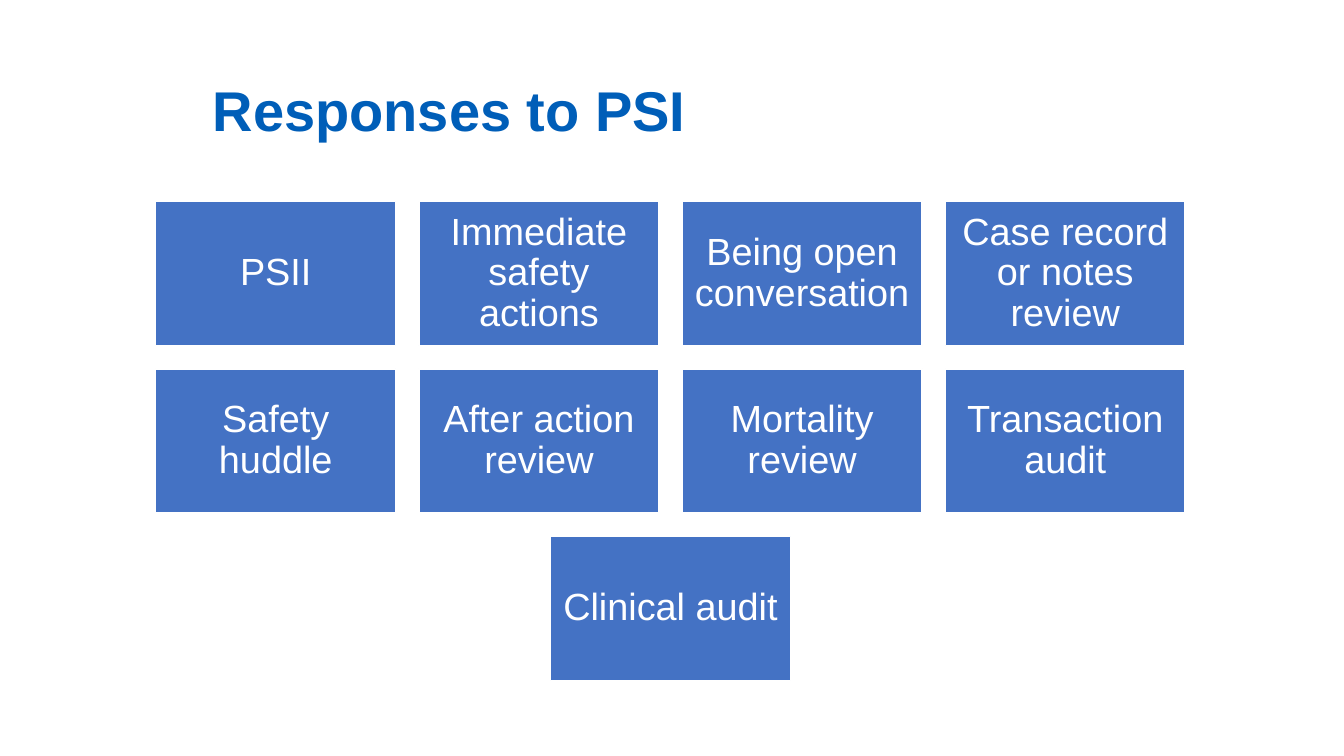
"""Build the slide that lists the responses to a patient safety incident."""
import dataclasses
import typing

import pptx
import pptx.dml.color
import pptx.enum.shapes
import pptx.enum.text
import pptx.slide
import pptx.text.text
import pptx.util

SLIDE_WIDTH, SLIDE_HEIGHT = 13.33, 7.5
COLUMNS = 4
CARD_WIDTH, CARD_HEIGHT = 2.38, 1.43
COLUMN_STEP, ROW_STEP = 2.61, 1.66
GRID_CENTER, GRID_TOP = 6.65, 2.0
BLUE, TITLE_BLUE, WHITE = "4472C4", "005EB8", "FFFFFF"
RESPONSES = (
    "PSII", "Immediate safety actions", "Being open conversation",
    "Case record or notes review", "Safety huddle", "After action review",
    "Mortality review", "Transaction audit", "Clinical audit",
)


@dataclasses.dataclass(frozen=True)
class Card:
    text: str
    column: float
    row: int


def color(value: str) -> pptx.dml.color.RGBColor:
    return pptx.dml.color.RGBColor.from_string(value)


def arrange(labels: typing.Sequence[str]) -> list[Card]:
    cards = []
    for row, start in enumerate(range(0, len(labels), COLUMNS)):
        members = labels[start:start + COLUMNS]
        offset = (len(members) - 1) / 2
        cards += [Card(text, index - offset, row) for index, text in enumerate(members)]
    return cards


def write_text(
    frame: pptx.text.text.TextFrame, text: str, size: int, ink: str, bold: bool,
    inset: float, alignment: pptx.enum.text.PP_ALIGN,
) -> None:
    margin = pptx.util.Inches(inset)
    frame_format = {
        "word_wrap": True,
        "vertical_anchor": pptx.enum.text.MSO_ANCHOR.MIDDLE,
        "margin_left": margin, "margin_right": margin,
        "margin_top": margin, "margin_bottom": margin,
    }
    para = frame.paragraphs[0]
    span = para.add_run()
    span.text = text
    span.font.color.rgb = color(ink)
    formats = (
        (frame, frame_format),
        (para, {"alignment": alignment, "line_spacing": 0.9}),
        (span.font, {"name": "Arial", "size": pptx.util.Pt(size), "bold": bold}),
    )
    for target, values in formats:
        for name, value in values.items():
            setattr(target, name, value)


def draw_title(page: pptx.slide.Slide, text: str) -> None:
    box = page.shapes.add_textbox(*map(pptx.util.Inches, (2.11, 0.4, 8.49, 1.45)))
    write_text(box.text_frame, text, 40, TITLE_BLUE, True, 0, pptx.enum.text.PP_ALIGN.LEFT)


def draw_card(page: pptx.slide.Slide, card: Card) -> None:
    left = GRID_CENTER + card.column * COLUMN_STEP - CARD_WIDTH / 2
    top = GRID_TOP + card.row * ROW_STEP
    box = page.shapes.add_shape(
        pptx.enum.shapes.MSO_SHAPE.RECTANGLE,
        *map(pptx.util.Inches, (left, top, CARD_WIDTH, CARD_HEIGHT)),
    )
    box.shadow.inherit = False
    box.fill.solid()
    box.fill.fore_color.rgb = color(BLUE)
    box.line.color.rgb = color(WHITE)
    box.line.width = pptx.util.Pt(1)
    write_text(box.text_frame, card.text, 27, WHITE, False, 0.1, pptx.enum.text.PP_ALIGN.CENTER)


def main() -> None:
    deck = pptx.Presentation()
    deck.slide_width = pptx.util.Inches(SLIDE_WIDTH)
    deck.slide_height = pptx.util.Inches(SLIDE_HEIGHT)
    page = deck.slides.add_slide(deck.slide_layouts[6])
    draw_title(page, "Responses to PSI")
    for card in arrange(RESPONSES):
        draw_card(page, card)
    deck.save("out.pptx")


if __name__ == "__main__":
    main()
